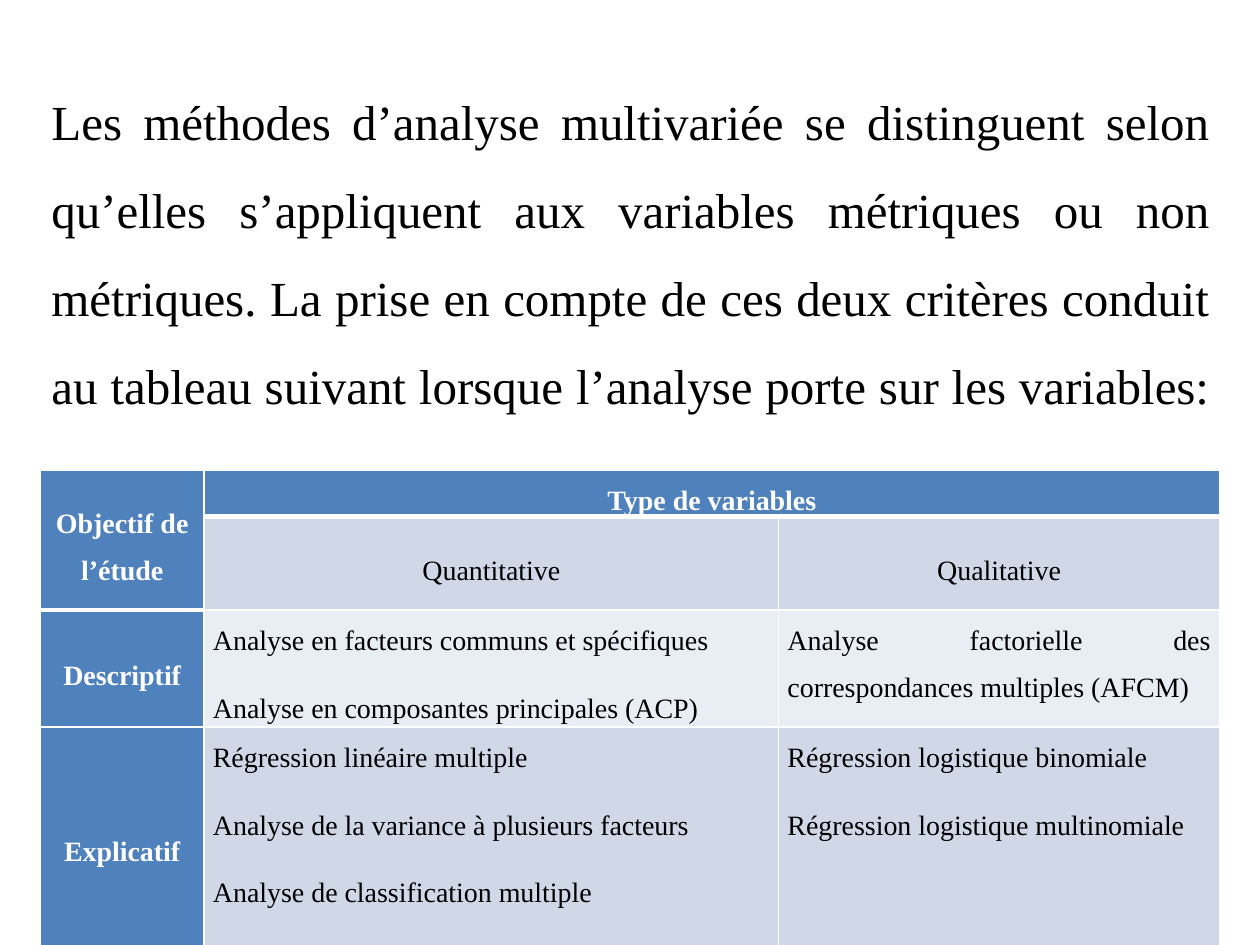
from dataclasses import dataclass

from lxml import etree
from pptx import Presentation
from pptx.dml.color import RGBColor
from pptx.enum import text as t
from pptx.oxml import ns
from pptx.util import Inches, Pt

FONT = "Times New Roman"
WHITE = RGBColor(0xFF, 0xFF, 0xFF)
BLACK = RGBColor(0x00, 0x00, 0x00)
BLUE = RGBColor(0x4F, 0x81, 0xBD)
BAND = RGBColor(0xD0, 0xD8, 0xE8)
LIGHT = RGBColor(0xE9, 0xED, 0xF4)

INTRO = (
    "Les méthodes d’analyse multivariée se distinguent selon qu’elles "
    "s’appliquent aux variables métriques ou non métriques. La prise en "
    "compte de ces deux critères conduit au tableau suivant lorsque "
    "l’analyse porte sur les variables: "
)
COL_WIDTHS = (1.3, 4.56, 3.5)
ROW_HEIGHTS = (0.36, 0.4, 0.93, 1.86)


@dataclass(frozen=True)
class CellStyle:
    fill: RGBColor
    color: RGBColor = BLACK
    bold: bool = False
    align: t.PP_ALIGN = t.PP_ALIGN.JUSTIFY
    anchor: t.MSO_ANCHOR = t.MSO_ANCHOR.TOP
    bottom: float = 1


@dataclass(frozen=True)
class CellSpec:
    row: int
    col: int
    lines: tuple[str, ...]
    style: CellStyle


CENTER, MIDDLE = t.PP_ALIGN.CENTER, t.MSO_ANCHOR.MIDDLE
HEADER = CellStyle(BLUE, WHITE, True, CENTER, MIDDLE, bottom=3)
SIDE = CellStyle(BLUE, WHITE, True, CENTER, MIDDLE)
SUBHEAD = CellStyle(BAND, align=CENTER, anchor=MIDDLE)
DESCRIPTIVE = CellStyle(LIGHT)
EXPLANATORY = CellStyle(BAND)

CELLS = (
    CellSpec(0, 0, ("Objectif de l’étude",), HEADER),
    CellSpec(0, 1, ("Type de variables",), HEADER),
    CellSpec(0, 2, (), HEADER),
    CellSpec(1, 0, (), HEADER),
    CellSpec(1, 1, ("Quantitative",), SUBHEAD),
    CellSpec(1, 2, ("Qualitative",), SUBHEAD),
    CellSpec(2, 0, ("Descriptif",), SIDE),
    CellSpec(2, 1, ("Analyse en facteurs communs et spécifiques",
                    "Analyse en composantes principales (ACP)"), DESCRIPTIVE),
    CellSpec(2, 2, ("Analyse factorielle des correspondances multiples (AFCM)",),
             DESCRIPTIVE),
    CellSpec(3, 0, ("Explicatif",), SIDE),
    CellSpec(3, 1, ("Régression linéaire multiple",
                    "Analyse de la variance à plusieurs facteurs",
                    "Analyse de classification multiple"), EXPLANATORY),
    CellSpec(3, 2, ("Régression logistique binomiale",
                    "Régression logistique multinomiale"), EXPLANATORY),
)


def format_paragraph(p, size: float, color: RGBColor, align: t.PP_ALIGN,
                     bold: bool = False) -> None:
    p.alignment = align
    p.line_spacing = 1.5
    p.font.name = FONT
    p.font.size = Pt(size)
    p.font.bold = bold
    p.font.color.rgb = color


def set_borders(cell, bottom: float) -> None:
    tc_pr = cell._tc.get_or_add_tcPr()
    for side, width in (("L", 1), ("R", 1), ("T", 1), ("B", bottom)):
        ln = etree.SubElement(tc_pr, ns.qn(f"a:ln{side}"), w=str(Pt(width)))
        fill = etree.SubElement(ln, ns.qn("a:solidFill"))
        etree.SubElement(fill, ns.qn("a:srgbClr"), val=str(WHITE))


def fill_cell(cell, spec: CellSpec) -> None:
    style = spec.style
    set_borders(cell, style.bottom)
    cell.fill.solid()
    cell.fill.fore_color.rgb = style.fill
    cell.vertical_anchor = style.anchor
    cell.margin_left = cell.margin_right = Inches(0.07)
    cell.margin_top = cell.margin_bottom = 0
    tf = cell.text_frame
    for i, line in enumerate(spec.lines):
        p = tf.add_paragraph() if i else tf.paragraphs[0]
        p.text = line
        format_paragraph(p, 16, style.color, style.align, style.bold)
        p.space_before = p.space_after = Pt(6)


def add_methods_table(s) -> None:
    table = s.shapes.add_table(
        len(ROW_HEIGHTS), len(COL_WIDTHS),
        Inches(0.32), Inches(3.73), Inches(9.37), Inches(3.54)).table
    for column, width in zip(table.columns, COL_WIDTHS):
        column.width = Inches(width)
    for row, height in zip(table.rows, ROW_HEIGHTS):
        row.height = Inches(height)
    table.cell(0, 0).merge(table.cell(1, 0))
    table.cell(0, 1).merge(table.cell(0, 2))
    for spec in CELLS:
        fill_cell(table.cell(spec.row, spec.col), spec)


def add_intro(s) -> None:
    sp = s.shapes.add_textbox(Inches(0.31), Inches(0.44), Inches(9.39), Inches(2.84))
    tf = sp.text_frame
    tf.word_wrap = True
    tf.auto_size = t.MSO_AUTO_SIZE.SHAPE_TO_FIT_TEXT
    p = tf.paragraphs[0]
    p.text = INTRO
    format_paragraph(p, 28, BLACK, t.PP_ALIGN.JUSTIFY)


def main() -> None:
    prs = Presentation()
    prs.slide_width, prs.slide_height = Inches(10), Inches(7.5)
    s = prs.slides.add_slide(prs.slide_layouts[6])
    add_methods_table(s)
    add_intro(s)
    prs.save("out.pptx")


if __name__ == "__main__":
    main()
